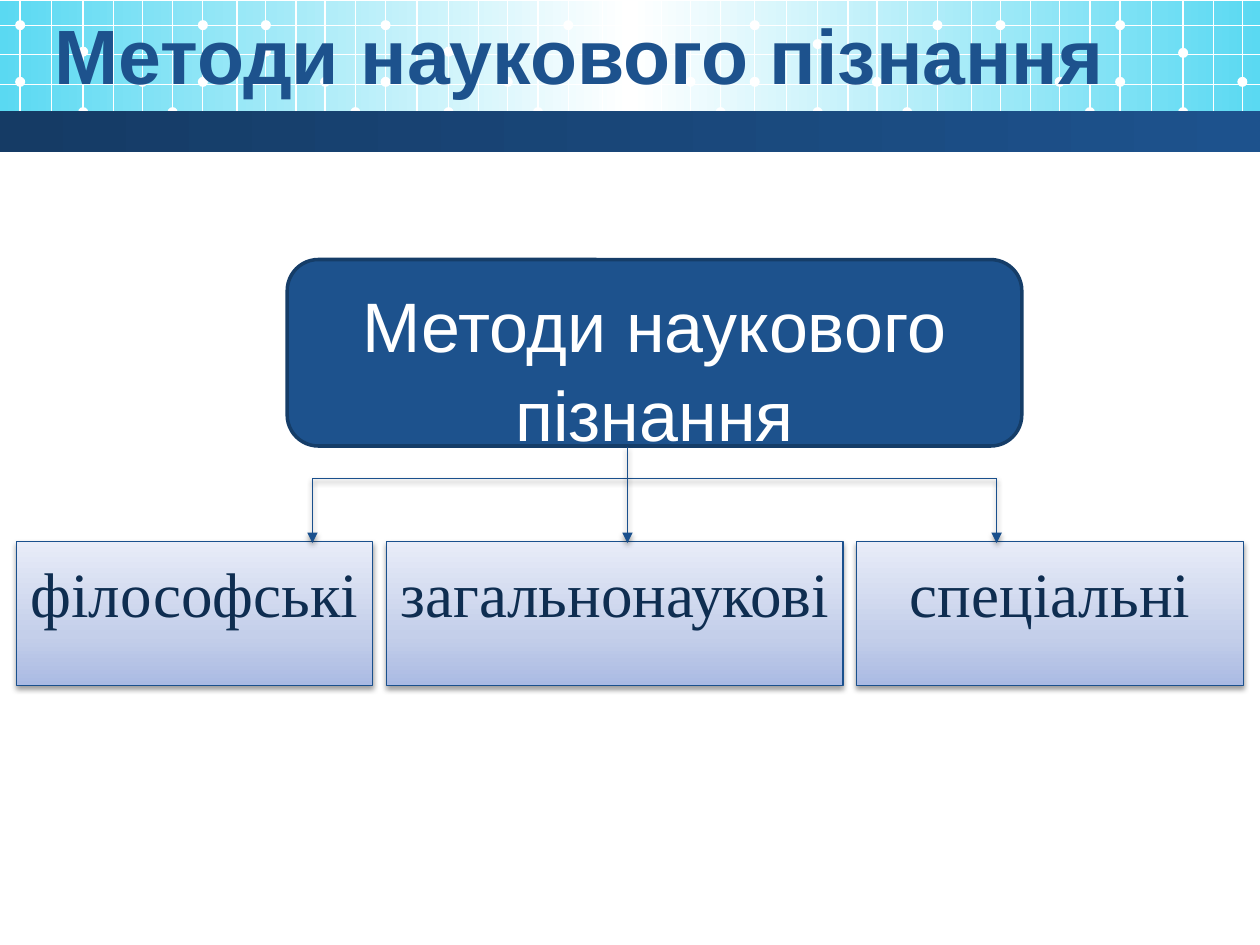
from pptx import Presentation
from pptx.dml.color import RGBColor
from pptx.enum.shapes import MSO_CONNECTOR, MSO_SHAPE
from pptx.enum.text import MSO_ANCHOR, PP_ALIGN
from pptx.oxml.ns import qn
from pptx.util import Inches, Pt
from lxml import etree

RECTANGLE = MSO_SHAPE.RECTANGLE
ROUNDED = MSO_SHAPE.ROUNDED_RECTANGLE
OVAL = MSO_SHAPE.OVAL
STRAIGHT = MSO_CONNECTOR.STRAIGHT
TOP, BOTTOM = MSO_ANCHOR.TOP, MSO_ANCHOR.BOTTOM
CENTER = PP_ALIGN.CENTER

COLORS = {
    "white": "FFFFFF", "cyan": "5AD9F2", "strip": "153B65", "blue": "1D528D",
    "root_line": "153D68", "line": "1A508D", "text": "0F2E51", "shadow": "000000",
    "box_low": "AABAE3", "box_middle": "C4CFEA", "box_high": "E8ECF8",
}
BANNER_STOPS = [(0, "cyan"), (50, "white"), (100, "cyan")]
STRIP_STOPS = [(0, "strip"), (100, "blue")]
BOX_STOPS = [(0, "box_low"), (35, "box_middle"), (100, "box_high")]

# Banner mesh: column offsets within one repeat, and rows
COLUMNS = [0, 0.25, 0.5, 0.74, 0.97, 1.21, 1.45, 1.72, 1.95, 2.19, 2.42, 2.66]
ROWS = [0.2, 0.43, 0.67, 0.89]
# Start of each repeat, then the heights of its two varying dots
REPEATS = [(0.16, 0.41, 0.65), (3.06, 0.41, 0.43),
           (5.99, 0.35, 0.51), (8.89, 0.42, 0.65)]
DOT = 0.08

# Category boxes: left, width, text
BOX_TOP, BOX_HEIGHT = 4.3, 1.14
CATEGORIES = [(0.13, 2.83, "філософські"), (3.07, 3.62, "загальнонаукові"),
              (6.8, 3.07, "спеціальні")]
BRANCH_TOP, ARROW_TIP = 3.8, 4.31
ARROWS = [(2.48, BRANCH_TOP), (4.98, 3.55), (7.91, BRANCH_TOP)]


def color(name):
    return RGBColor.from_string(COLORS[name])


class SlideBuilder:
    def __init__(self, slide):
        self.slide = slide
        self.shapes = slide.shapes

    def shape(self, kind, left, top, width, height, fill, line=None, weight=0.75):
        shape = self.shapes.add_shape(
            kind, Inches(left), Inches(top), Inches(width), Inches(height))
        shape.shadow.inherit = False
        if isinstance(fill, str):
            shape.fill.solid()
            shape.fill.fore_color.rgb = color(fill)
        if line:
            shape.line.color.rgb = color(line)
            shape.line.width = Pt(weight)
        else:
            shape.line.fill.background()
        return shape

    def gradient(self, shape, stops, angle=0):
        shape.fill.gradient()
        shape.fill.gradient_angle = angle
        stop_list = next(shape.element.iter(qn("a:gsLst")))
        stop_list.clear()
        for position, name in stops:
            stop = etree.SubElement(stop_list, qn("a:gs"), pos=str(position * 1000))
            etree.SubElement(stop, qn("a:srgbClr"), val=COLORS[name])

    def line(self, x1, y1, x2, y2, name, shadow=False, arrow=False):
        connector = self.shapes.add_connector(
            STRAIGHT, Inches(x1), Inches(y1), Inches(x2), Inches(y2))
        connector.line.color.rgb = color(name)
        connector.line.width = Pt(0.75)
        properties = connector.element.spPr
        if arrow:
            etree.SubElement(properties.find(qn("a:ln")), qn("a:tailEnd"), type="triangle")
        effects = etree.SubElement(properties, qn("a:effectLst"))
        if shadow:
            self.shadow(effects)

    def shadow(self, effects):
        outer = etree.SubElement(
            effects, qn("a:outerShdw"), blurRad=str(Pt(3.1)), dist=str(Pt(1.6)),
            dir="5400000", rotWithShape="0")
        shade = etree.SubElement(outer, qn("a:srgbClr"), val=COLORS["shadow"])
        etree.SubElement(shade, qn("a:alpha"), val="38000")

    def text(self, shape, text, size, font, name, anchor=TOP, inset=0.05,
             bold=False, spacing=1.0):
        frame = shape.text_frame
        frame.word_wrap = True
        frame.vertical_anchor = anchor
        frame.margin_top = Inches(inset)
        frame.text = text
        paragraph = frame.paragraphs[0]
        paragraph.alignment = CENTER
        paragraph.line_spacing = spacing
        paragraph.font.size = Pt(size)
        paragraph.font.name = font
        paragraph.font.bold = bold
        paragraph.font.color.rgb = color(name)

    def banner(self):
        background = self.shape(RECTANGLE, 0, 0.01, 10, 1.02, None)
        self.gradient(background, BANNER_STOPS)
        for start, third, seventh in REPEATS:
            for offset in COLUMNS:
                if start + offset < 10:
                    self.line(start + offset, 0, start + offset, 1.1, "white")
            dots = [(0, 0.65), (0, 0.2), (0.5, third), (0.5, 0.89), (0.97, 0.65),
                    (1.21, 0.89), (1.45, seventh), (1.45, 0.2), (1.95, 0.41),
                    (1.95, 0.2), (2.42, 0.65), (2.66, 0.89)]
            for offset, height in dots:
                if start + offset < 10:
                    self.shape(OVAL, start + offset - DOT / 2, height - DOT / 2,
                               DOT, DOT, "white")
        for row in ROWS:
            self.line(0, row, 10, row, "white")
        strip = self.shape(RECTANGLE, 0, 0.88, 10, 0.33, None)
        self.gradient(strip, STRIP_STOPS)

    def title(self, text):
        title = self.shapes.title
        title.left, title.top = Inches(-0.28), Inches(0)
        title.width, title.height = Inches(9.76), Inches(0.84)
        self.text(title, text, 44, "Arial", "blue", anchor=BOTTOM, bold=True)
        # Bring the title in front of the banner
        title.element.getparent().append(title.element)

    def category(self, left, width, text):
        box = self.shape(RECTANGLE, left, BOX_TOP, width, BOX_HEIGHT, None, "line")
        self.gradient(box, BOX_STOPS, angle=90)
        self.shadow(box.element.spPr.find(qn("a:effectLst")))
        self.text(box, text, 36, "Times New Roman", "text", inset=0.1)


def main():
    presentation = Presentation()
    presentation.slide_width = Inches(10)
    presentation.slide_height = Inches(7.5)
    title_only = presentation.slide_layouts[5]
    builder = SlideBuilder(presentation.slides.add_slide(title_only))

    # Banner and title
    builder.banner()
    builder.title("Методи наукового пізнання")

    # Root of the tree
    root = builder.shape(ROUNDED, 2.28, 2.06, 5.83, 1.48, "blue", "root_line", 2)
    builder.text(root, "Методи наукового пізнання", 40, "Arial", "white",
                 inset=0.08, spacing=1.05)

    # Categories
    for left, width, text in CATEGORIES:
        builder.category(left, width, text)

    # Branches
    builder.line(ARROWS[0][0], BRANCH_TOP, ARROWS[-1][0], BRANCH_TOP, "line", shadow=True)
    for x, top in ARROWS:
        builder.line(x, top, x, ARROW_TIP, "line", shadow=True, arrow=True)

    presentation.save("out.pptx")


if __name__ == "__main__":
    main()
